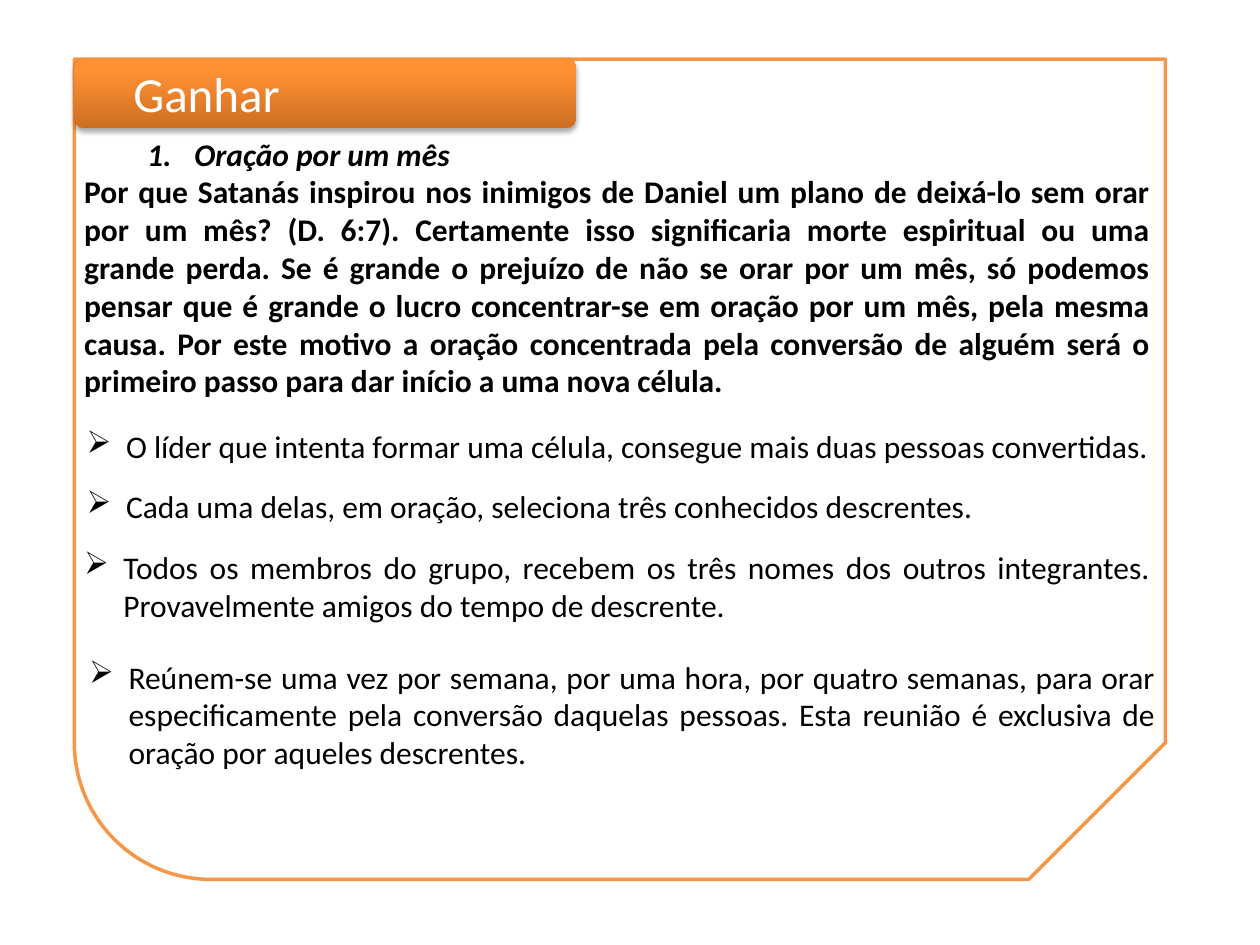
import pptx
import pptx.util
import pptx.dml.color
import pptx.enum.shapes
import pptx.enum.text
import pptx.oxml.ns
import lxml.etree

Pt = pptx.util.Pt
Color = pptx.dml.color.RGBColor
Shape = pptx.enum.shapes.MSO_SHAPE
Align = pptx.enum.text.PP_ALIGN

ORANGE = Color(0xF7, 0x96, 0x46)
DARK = Color(0xCC, 0x6E, 0x20)
BRIGHT = Color(0xFF, 0x90, 0x34)
WHITE = Color(0xFF, 0xFF, 0xFF)
BLACK = Color(0, 0, 0)

TITLE = "Oração por um mês"
REASON = (
    "Por que Satanás inspirou nos inimigos de Daniel um plano de deixá-lo sem orar "
    "por um mês? (D. 6:7). Certamente isso significaria morte espiritual ou uma "
    "grande perda. Se é grande o prejuízo de não se orar por um mês, só podemos "
    "pensar que é grande o lucro concentrar-se em oração por um mês, pela mesma "
    "causa. Por este motivo a oração concentrada pela conversão de alguém será o "
    "primeiro passo para dar início a uma nova célula."
)
STEPS = [
    (42.5, 240.5, 29, Align.LEFT,
     "O líder que intenta formar uma célula, consegue mais duas pessoas convertidas."),
    (42.5, 275, 29, Align.LEFT,
     "Cada uma delas, em oração, seleciona três conhecidos descrentes."),
    (41, 309.6, 51, Align.JUSTIFY,
     "Todos os membros do grupo, recebem os três nomes dos outros integrantes. "
     "Provavelmente amigos do tempo de descrente."),
    (43.9, 372.2, 73, Align.JUSTIFY,
     "Reúnem-se uma vez por semana, por uma hora, por quatro semanas, para orar "
     "especificamente pela conversão daquelas pessoas. Esta reunião é exclusiva de "
     "oração por aqueles descrentes."),
]


def add_node(parent, tag, **attrs):
    """Append a DrawingML element and return it."""
    node = lxml.etree.SubElement(parent, pptx.oxml.ns.qn(tag))
    for name, value in attrs.items():
        node.set(name, str(value))
    return node


def put_text(para, text, size=18, color=BLACK, bold=False, italic=False,
             align=Align.LEFT, left=0, hang=0, mark=None, number=None):
    """Write a formatted paragraph with an optional bullet or number."""
    run = para.add_run()
    run.text = text
    font = run.font
    font.name, font.size = "Calibri", Pt(size)
    font.bold, font.italic = bold, italic
    font.color.rgb = color
    para.alignment = align
    props = para._p.get_or_add_pPr()
    props.set("marL", str(Pt(left)))
    props.set("indent", str(Pt(-hang)))
    if mark:
        add_node(props, "a:buChar", char=mark)
    if number:
        add_node(props, "a:buAutoNum", type=number)


def add_box(slide, left, top, width, height):
    """Add a wrapping text box and return its frame."""
    box = slide.shapes.add_textbox(Pt(left), Pt(top), Pt(width), Pt(height))
    box.text_frame.word_wrap = True
    return box.text_frame


def add_frame(slide):
    """Draw the outline with one round and one cut lower corner."""
    frame = slide.shapes.add_shape(
        Shape.SNIP_ROUND_RECTANGLE, Pt(42.5), Pt(33.8), Pt(623.5), Pt(468.7))
    frame.rotation = 180
    frame._element.spPr.xfrm.set("flipH", "1")
    frame.shadow.inherit = False
    frame.fill.background()
    frame.line.color.rgb = ORANGE
    frame.line.width = Pt(2)


def add_header(slide, text):
    """Draw the shaded heading tab with its soft shadow."""
    tab = slide.shapes.add_shape(
        Shape.ROUNDED_RECTANGLE, Pt(42.5), Pt(33.1), Pt(286.6), Pt(40.3))
    tab.adjustments[0] = 0.14
    tab.line.fill.background()
    tab.fill.gradient()
    tab.fill.gradient_angle = 90
    for stop, place, color in zip(tab.fill.gradient_stops, (0, 0.8), (DARK, BRIGHT)):
        stop.position = place
        stop.color.rgb = color
    tab.shadow.inherit = False
    effects = tab._element.spPr.find(pptx.oxml.ns.qn("a:effectLst"))
    shade = add_node(effects, "a:outerShdw", blurRad=Pt(3.1), dist=Pt(1.8),
                     dir=5400000, rotWithShape=0)
    tint = add_node(shade, "a:srgbClr", val=BLACK)
    add_node(tint, "a:alpha", val=35000)
    tab.text_frame.vertical_anchor = pptx.enum.text.MSO_ANCHOR.MIDDLE
    put_text(tab.text_frame.paragraphs[0], text, size=28, color=WHITE, left=25)


def add_reason(slide):
    """Add the numbered title and the paragraph beneath it."""
    frame = add_box(slide, 41, 73.4, 623.5, 160)
    title = frame.paragraphs[0]
    title.level = 1
    put_text(title, TITLE, bold=True, italic=True, align=Align.JUSTIFY,
             left=63, hang=27, number="arabicPeriod")
    put_text(frame.add_paragraph(), REASON, bold=True, align=Align.JUSTIFY)


def add_step(slide, left, top, height, align, text):
    """Add one bulleted step."""
    frame = add_box(slide, left, top, 623.5, height)
    put_text(frame.paragraphs[0], text, align=align, left=22.5, hang=22.5, mark="➢")


def main():
    """Build and save the slide."""
    deck = pptx.Presentation()
    deck.slide_width, deck.slide_height = Pt(720), Pt(540)
    slide = deck.slides.add_slide(deck.slide_layouts[6])
    add_frame(slide)
    add_header(slide, "Ganhar")
    add_reason(slide)
    for step in STEPS:
        add_step(slide, *step)
    deck.save("out.pptx")


if __name__ == "__main__":
    main()
